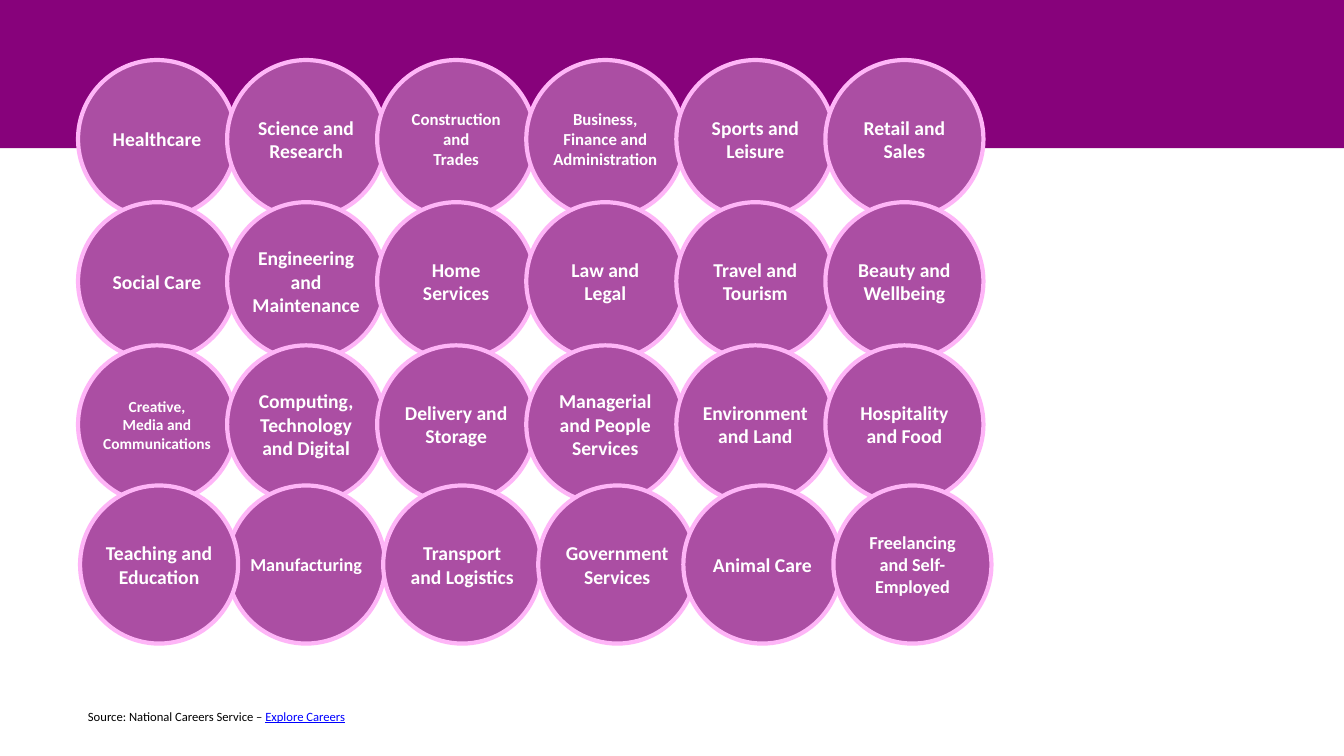
from dataclasses import dataclass
from pptx import Presentation
from pptx.dml.color import RGBColor
from pptx.enum.shapes import MSO_SHAPE as Shape
from pptx.enum.text import MSO_ANCHOR as Anchor, PP_ALIGN as Align
from pptx.util import Inches, Pt

# Content: one row of circles per list
SECTORS = [
    ["Healthcare", "Science and Research", "Construction and\vTrades",
     "Business, Finance and Administration", "Sports and Leisure",
     "Retail and Sales"],
    ["Social Care", "Engineering and Maintenance", "Home Services",
     "Law and Legal", "Travel and Tourism", "Beauty and Wellbeing"],
    ["Creative,\vMedia and\nCommunications",
     "Computing, Technology and Digital", "Delivery and Storage",
     "Managerial and People Services", "Environment and Land",
     "Hospitality and Food"],
    ["Teaching and Education", "Manufacturing", "Transport and Logistics",
     "Government Services", "Animal Care", "Freelancing and Self-Employed"],
]
# Text sizes that differ from the usual one, by row and column
SIZES = {(0, 2): 12, (0, 3): 12, (2, 0): 11, (3, 1): 13, (3, 5): 13}
SOURCE = "Source: National Careers Service – "
LINK = "Explore Careers"

# Layout in px
TOPS = [60, 202, 345, 485]
LEFTS = [78 + 299 * col // 2 for col in range(6)]
LAST = [80, 227, 383, 538, 683, 833]
DIAM = 158


@dataclass(frozen=True)
class Theme:
    font: str = "Calibri"
    band: str = "87027B"
    disc: str = "AB4EA3"
    ring: str = "FEB5F7"
    white: str = "FFFFFF"
    black: str = "000000"
    link: str = "0000FF"
    label: int = 14
    note: int = 9


THEME = Theme()


def px(num):
    return round(num * 914400 / 100.7)


def rgb(code):
    return RGBColor.from_string(code)


def write(frame, text, size, color, bold=False, under=False, align=Align.LEFT):
    """Append text; a newline starts a paragraph, a vertical tab a line."""
    for num, block in enumerate(text.split("\n")):
        para = frame.add_paragraph() if num else frame.paragraphs[-1]
        para.alignment = align
        for row, line in enumerate(block.split("\v")):
            if row:
                para.add_line_break()
            run = para.add_run()
            run.text = line
            font = run.font
            font.name, font.size, font.bold = THEME.font, Pt(size), bold
            font.underline = under
            font.color.rgb = rgb(color)


def fit(frame, side=0, end=0):
    frame.word_wrap = True
    frame.margin_left = frame.margin_right = px(side)
    frame.margin_top = frame.margin_bottom = px(end)


def draw(slide, kind, box, fill, line=None):
    shape = slide.shapes.add_shape(kind, *map(px, box))
    shape.shadow.inherit = False
    shape.fill.solid()
    shape.fill.fore_color.rgb = rgb(fill)
    if line:
        shape.line.color.rgb = rgb(line)
        shape.line.width = Pt(3)
    else:
        shape.line.fill.background()
    return shape


def main():
    deck = Presentation()
    deck.slide_width, deck.slide_height = Inches(13.34), Inches(7.5)
    slide = deck.slides.add_slide(deck.slide_layouts[6])

    # Header band
    draw(slide, Shape.RECTANGLE, (0, 0, 1344, 148), THEME.band)

    # Source line
    note = slide.shapes.add_textbox(*map(px, (78, 703, 904, 25))).text_frame
    fit(note, side=10, end=5)
    write(note, SOURCE, THEME.note, THEME.black)
    write(note, LINK, THEME.note, THEME.link, under=True)

    # Circles; the first one of the last row lies on top
    spots = [(row, col) for row in range(4) for col in range(6)]
    spots.sort(key=lambda spot: spot == (3, 0))
    for row, col in spots:
        left = (LAST if row == 3 else LEFTS)[col]
        disc = draw(slide, Shape.OVAL, (left, TOPS[row], DIAM, DIAM),
                    THEME.disc, THEME.ring)
        frame = disc.text_frame
        fit(frame)
        frame.vertical_anchor = Anchor.MIDDLE
        write(frame, SECTORS[row][col], SIZES.get((row, col), THEME.label),
              THEME.white, bold=True, align=Align.CENTER)

    deck.save("out.pptx")


if __name__ == "__main__":
    main()
